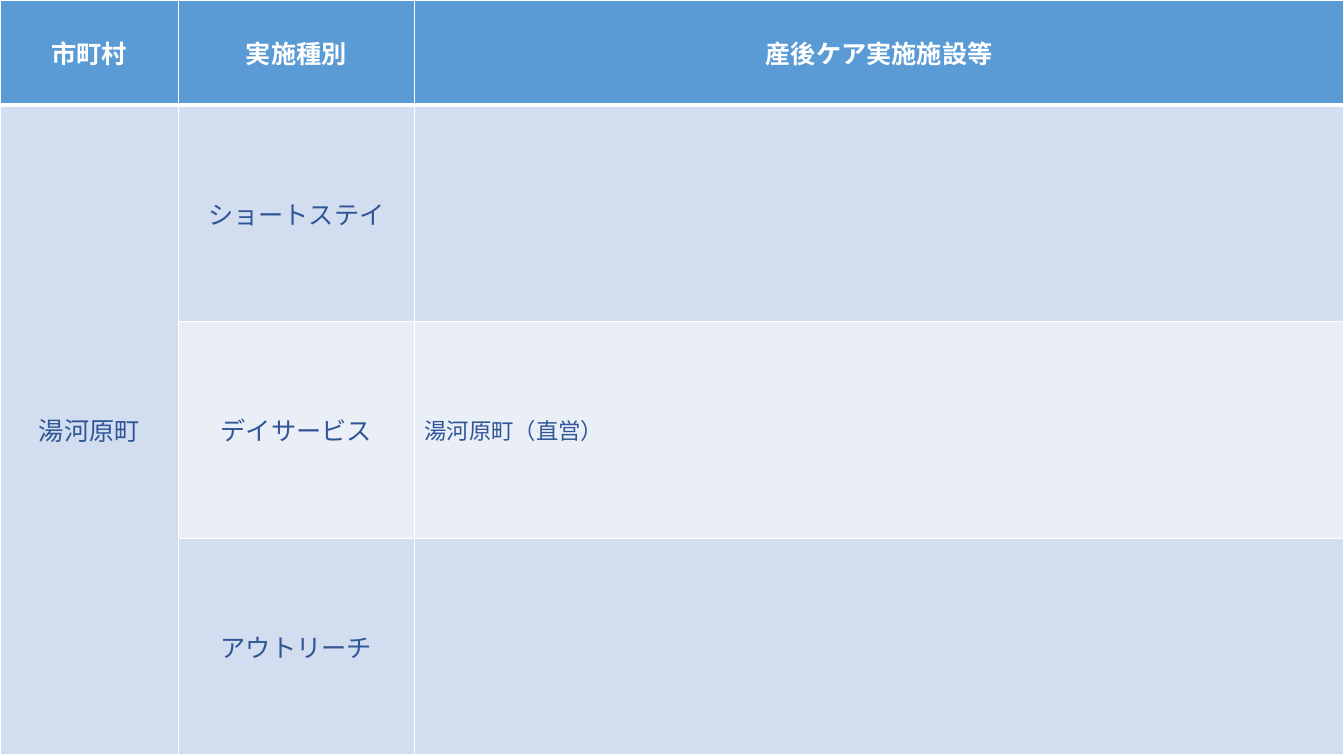
import pptx
import pptx.util
import pptx.dml.color
import pptx.enum.text
import pptx.oxml.ns
import lxml.etree

FONT = "Noto Sans CJK JP"
COLORS = {"head": "5B9BD5", "dark": "D2DEEF", "light": "EAEFF7",
          "text": "2F5597", "white": "FFFFFF"}
ALIGN = pptx.enum.text.PP_ALIGN
Inches = pptx.util.Inches
qn = pptx.oxml.ns.qn


def write(cell, text, size=18, color="text", bold=False, align=ALIGN.CENTER):
    para = cell.text_frame.paragraphs[0]
    para.alignment = align
    run = para.add_run()
    run.text = text
    font = run.font
    font.name, font.size, font.bold = FONT, pptx.util.Pt(size), bold
    font.color.rgb = pptx.dml.color.RGBColor.from_string(COLORS[color])
    east = lxml.etree.SubElement(font._element, qn("a:ea"))
    east.set("typeface", FONT)


def paint(cell, color, top=1, bottom=1):
    cell.fill.solid()
    cell.fill.fore_color.rgb = pptx.dml.color.RGBColor.from_string(COLORS[color])
    props = cell._tc.get_or_add_tcPr()
    sides = {"lnL": 1, "lnR": 1, "lnT": top, "lnB": bottom}
    # Borders must come before the fill
    for place, (side, width) in enumerate(sides.items()):
        line = lxml.etree.Element(qn("a:" + side), w=str(pptx.util.Pt(width)))
        fill = lxml.etree.SubElement(line, qn("a:solidFill"))
        lxml.etree.SubElement(fill, qn("a:srgbClr"), val=COLORS["white"])
        props.insert(place, line)


# Slide
deck = pptx.Presentation()
deck.slide_width, deck.slide_height = Inches(13.33), Inches(7.5)
slide = deck.slides.add_slide(deck.slide_layouts[6])

# Table grid
widths = [1.77, 2.34, 9.22]
heights = [1.04] + [2.15] * 3
table = slide.shapes.add_table(len(heights), len(widths), 0, 0,
                               Inches(sum(widths)), Inches(sum(heights))).table
for col, width in zip(table.columns, widths):
    col.width = Inches(width)
for row, height in zip(table.rows, heights):
    row.height = Inches(height)

# Fills and borders, with a thick line under the header
fills = ["head", "dark", "light", "dark"]
for r, fill in enumerate(fills):
    for c in range(len(widths)):
        cell = table.cell(r, c)
        cell.vertical_anchor = pptx.enum.text.MSO_ANCHOR.MIDDLE
        paint(cell, "dark" if r and c == 0 else fill,
              top=3 if r == 1 else 1, bottom=3 if r == 0 else 1)

# Header
for c, title in enumerate(["市町村", "実施種別", "産後ケア実施施設等"]):
    write(table.cell(0, c), title, color="white", bold=True)

# Town, care types and facility
table.cell(1, 0).merge(table.cell(3, 0))
write(table.cell(1, 0), "湯河原町")
for r, care in enumerate(["ショートステイ", "デイサービス", "アウトリーチ"], 1):
    write(table.cell(r, 1), care)
write(table.cell(2, 2), "湯河原町（直営）", size=16, align=ALIGN.LEFT)

deck.save("out.pptx")
